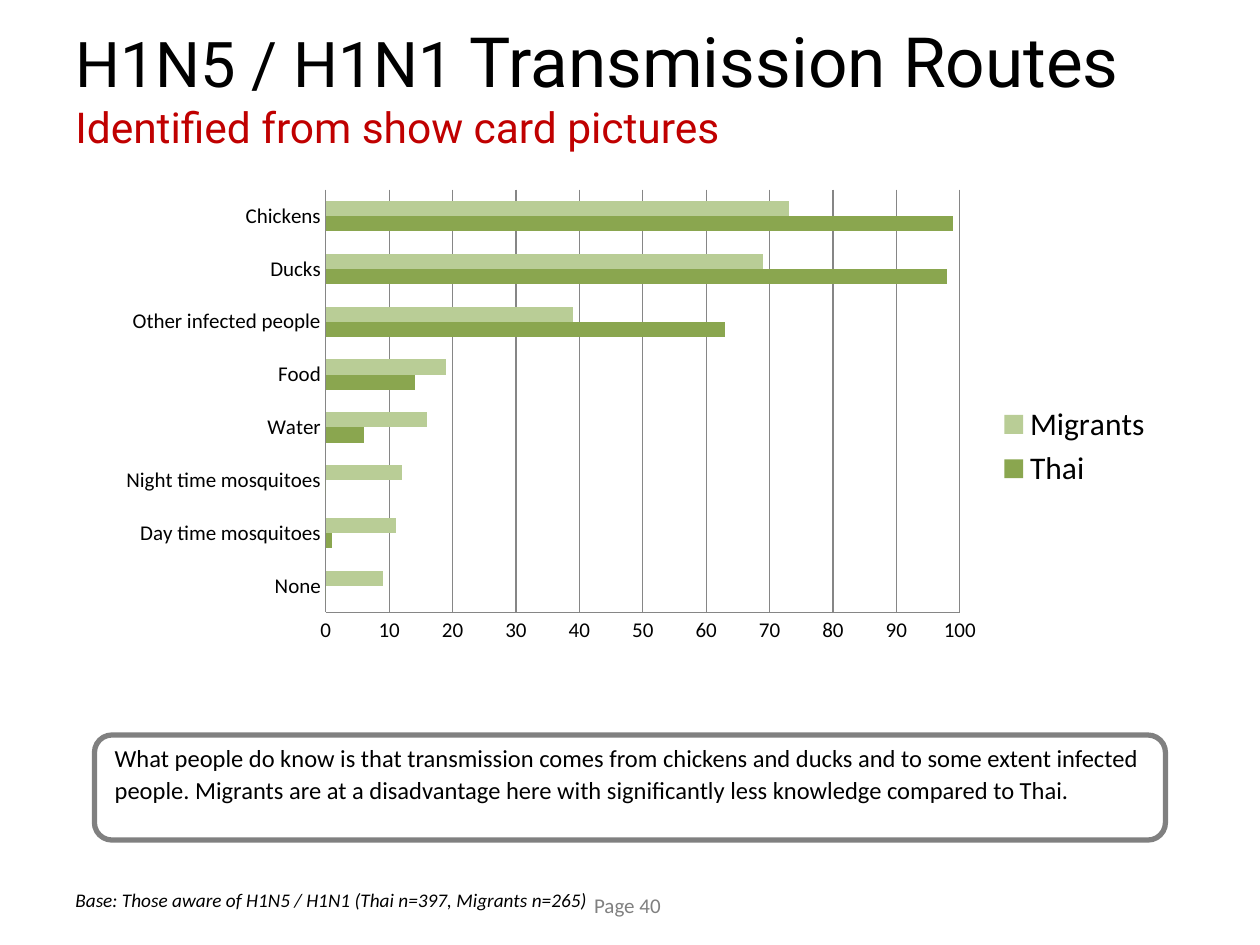
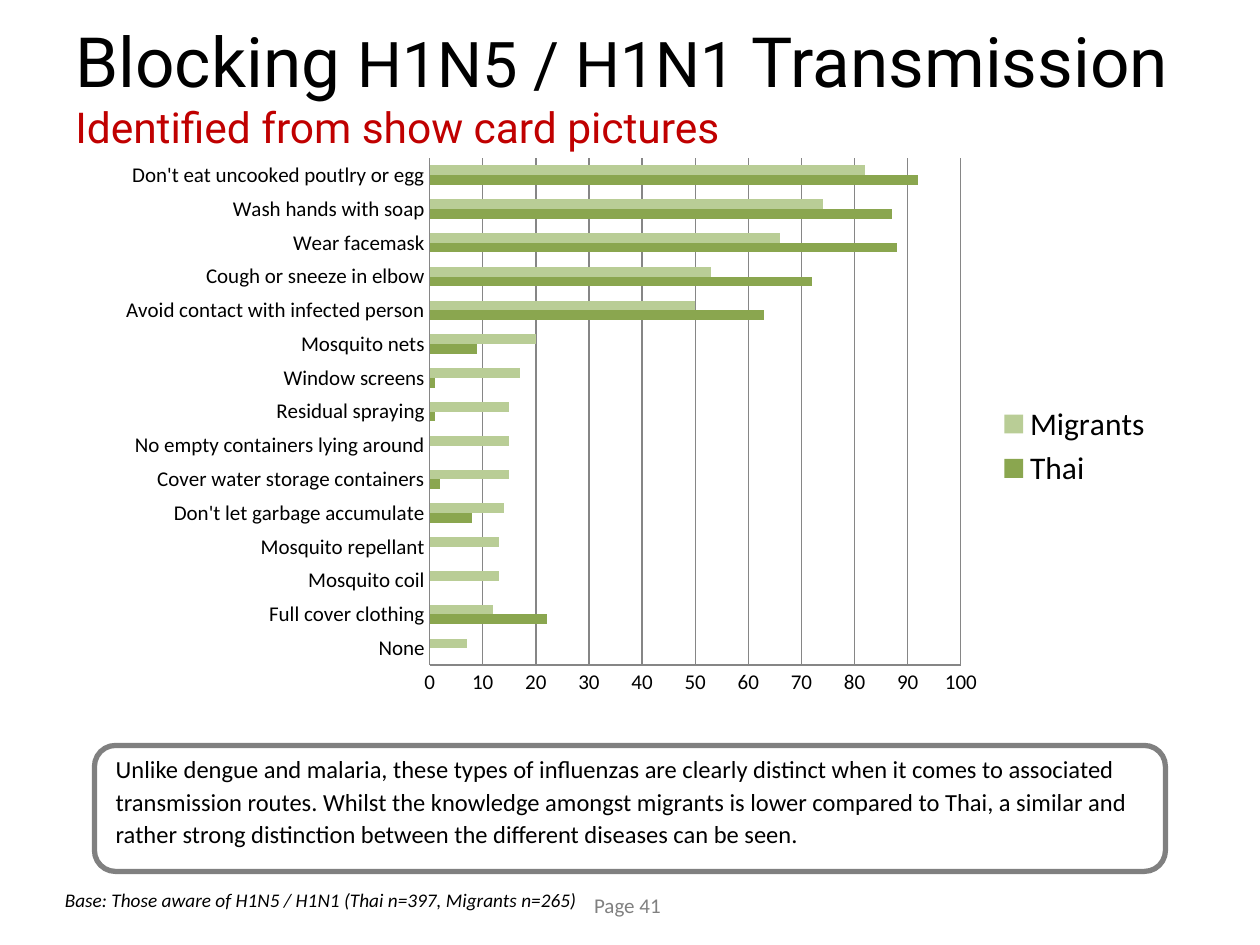
from dataclasses import dataclass

from lxml import etree
from pptx import Presentation
from pptx.chart.data import CategoryChartData
from pptx.dml.color import RGBColor
from pptx.enum.chart import XL_CHART_TYPE, XL_LEGEND_POSITION, XL_TICK_MARK
from pptx.enum.shapes import MSO_SHAPE
from pptx.enum.text import MSO_ANCHOR, PP_ALIGN
from pptx.oxml.ns import qn
from pptx.util import Inches, Pt

BAR_CLUSTERED = XL_CHART_TYPE.BAR_CLUSTERED
LEGEND_RIGHT = XL_LEGEND_POSITION.RIGHT
NO_TICK = XL_TICK_MARK.NONE
ROUNDED = MSO_SHAPE.ROUNDED_RECTANGLE
TOP, MIDDLE = MSO_ANCHOR.TOP, MSO_ANCHOR.MIDDLE
LEFT = PP_ALIGN.LEFT

# Shared style: the slide is a grid of 120 columns by 90 rows
SLIDE_WIDTH, SLIDE_HEIGHT = Inches(10), Inches(7.5)
COLUMN, ROW = SLIDE_WIDTH / 120, SLIDE_HEIGHT / 90
BODY_LEFT, BODY_WIDTH = 9, 102
HEADING_FONT, BODY_FONT = "Roboto", "Calibri"
BLACK, RED, GRAY, GRID_GRAY = "000000", "C00000", "808080", "868686"
THAI_GREEN, MIGRANT_GREEN = "8AA64F", "B9CD96"
VIRUS_SIZE, TITLE_SIZE, SUBTITLE_SIZE = 36, 39.6, 24.3
SUBTITLE = "Identified from show card pictures"
BASE_NOTE = "Base: Those aware of H1N5 / H1N1 (Thai n=397, Migrants n=265)"


@dataclass(frozen=True)
class Area:
    """A place on the grid, in columns and rows."""
    left: float
    top: float
    width: float
    height: float

    def lengths(self) -> tuple[int, int, int, int]:
        return (round(self.left * COLUMN), round(self.top * ROW),
                round(self.width * COLUMN), round(self.height * ROW))


@dataclass(frozen=True)
class Answer:
    """One bar pair, in percent."""
    label: str
    thai: int | None
    migrants: int


@dataclass(frozen=True)
class Survey:
    """The content of one slide."""
    page: int
    title: list[tuple[str, float]]
    chart_area: Area
    plot_shares: dict[str, float]
    answers: list[Answer]
    finding: str
    finding_area: Area
    base_left: float


SURVEYS = [
    Survey(
        page=40,
        title=[("H1N5 / H1N1 ", VIRUS_SIZE), ("Transmission Routes", TITLE_SIZE)],
        chart_area=Area(BODY_LEFT, 18, BODY_WIDTH, 49),
        plot_shares={"x": 0.216, "y": 0, "w": 0.592, "h": 0.823},
        answers=[
            Answer("None", 0, 9),
            Answer("Day time mosquitoes", 1, 11),
            Answer("Night time mosquitoes", 0, 12),
            Answer("Water", 6, 16),
            Answer("Food", 14, 19),
            Answer("Other infected people", 63, 39),
            Answer("Ducks", 98, 69),
            Answer("Chickens", 99, 73),
        ],
        finding="What people do know is that transmission comes from chickens and "
                "ducks and to some extent infected people. Migrants are at a "
                "disadvantage here with significantly less knowledge compared to Thai.",
        finding_area=Area(BODY_LEFT, 70, BODY_WIDTH, 10),
        base_left=6,
    ),
    Survey(
        page=41,
        title=[("Blocking ", TITLE_SIZE), ("H1N5 / H1N1 ", VIRUS_SIZE),
               ("Transmission", TITLE_SIZE)],
        chart_area=Area(BODY_LEFT, 14, BODY_WIDTH, 57),
        plot_shares={"x": 0.313, "y": 0.019, "w": 0.496, "h": 0.847},
        answers=[
            Answer("None", 0, 7),
            Answer("Full cover clothing", 22, 12),
            Answer("Mosquito coil", None, 13),
            Answer("Mosquito repellant", None, 13),
            Answer("Don't let garbage accumulate", 8, 14),
            Answer("Cover water storage containers", 2, 15),
            Answer("No empty containers lying around", None, 15),
            Answer("Residual spraying", 1, 15),
            Answer("Window screens", 1, 17),
            Answer("Mosquito nets", 9, 20),
            Answer("Avoid contact with infected person", 63, 50),
            Answer("Cough or sneeze in elbow", 72, 53),
            Answer("Wear facemask", 88, 66),
            Answer("Wash hands with soap", 87, 74),
            Answer("Don't eat uncooked poutlry or egg", 92, 82),
        ],
        finding="Unlike dengue and malaria, these types of influenzas are clearly "
                "distinct when it comes to associated transmission routes. Whilst the "
                "knowledge amongst migrants is lower compared to Thai, a similar and "
                "rather strong distinction between the different diseases can be seen.",
        finding_area=Area(BODY_LEFT, 71, BODY_WIDTH, 12),
        base_left=5,
    ),
]


def rgb(color: str) -> RGBColor:
    return RGBColor.from_string(color)


def add_text(paragraph, text: str, *, size: float, color: str = BLACK,
             font: str = BODY_FONT, italic: bool = False) -> None:
    run = paragraph.add_run()
    run.text = text
    run.font.name, run.font.size = font, Pt(size)
    run.font.color.rgb = rgb(color)
    run.font.italic = italic


def add_label(slide, area: Area, text: str, **text_format) -> None:
    frame = slide.shapes.add_textbox(*area.lengths()).text_frame
    frame.word_wrap = False
    add_text(frame.paragraphs[0], text, **text_format)


def add_title(slide, parts: list[tuple[str, float]]) -> None:
    frame = slide.shapes.add_textbox(*Area(6, 3, 108, 9.4).lengths()).text_frame
    frame.word_wrap = True
    frame.vertical_anchor = MIDDLE
    frame.margin_top = Inches(0.12)
    heading = frame.paragraphs[0]
    for text, size in parts:
        add_text(heading, text, size=size, font=HEADING_FONT)
    heading.add_line_break()
    add_text(heading, SUBTITLE, size=SUBTITLE_SIZE, color=RED, font=HEADING_FONT)


def add_finding(slide, area: Area, text: str) -> None:
    box = slide.shapes.add_shape(ROUNDED, *area.lengths())
    box.shadow.inherit = False
    box.fill.background()
    box.line.color.rgb, box.line.width = rgb(GRAY), Pt(3)
    frame = box.text_frame
    frame.word_wrap = True
    frame.vertical_anchor = TOP
    frame.margin_top = frame.margin_right = frame.margin_bottom = 0
    frame.margin_left = Inches(0.12)
    paragraph = frame.paragraphs[0]
    paragraph.alignment, paragraph.line_spacing = LEFT, 1.1
    add_text(paragraph, text, size=14)


def place_plot(chart, shares: dict[str, float]) -> None:
    """Fix the inner plot area as shares of the chart."""
    plot_area = chart.element.find(".//" + qn("c:plotArea"))
    for automatic in plot_area.findall(qn("c:layout")):
        plot_area.remove(automatic)
    layout = etree.Element(qn("c:layout"))
    manual = etree.SubElement(layout, qn("c:manualLayout"))
    settings = {"layoutTarget": "inner", "xMode": "edge", "yMode": "edge", **shares}
    for tag, value in settings.items():
        etree.SubElement(manual, qn(f"c:{tag}")).set("val", str(value))
    plot_area.insert(0, layout)


def style_line(line) -> None:
    line.color.rgb, line.width = rgb(GRID_GRAY), Pt(0.75)


def add_answer_chart(slide, survey: Survey) -> None:
    data = CategoryChartData()
    data.categories = [answer.label for answer in survey.answers]
    data.add_series("Thai", [answer.thai for answer in survey.answers])
    data.add_series("Migrants", [answer.migrants for answer in survey.answers])
    chart = slide.shapes.add_chart(
        BAR_CLUSTERED, *survey.chart_area.lengths(), data).chart
    chart.has_title = False
    chart.font.name, chart.font.size = BODY_FONT, Pt(18)
    chart.font.color.rgb = rgb(BLACK)
    chart.has_legend = True
    chart.legend.position = LEGEND_RIGHT
    chart.legend.include_in_layout = False

    # Bars
    bars = chart.plots[0]
    bars.gap_width, bars.overlap = 150, 0
    bars.vary_by_categories = False
    for series, color in zip(bars.series, (THAI_GREEN, MIGRANT_GREEN)):
        series.format.fill.solid()
        series.format.fill.fore_color.rgb = rgb(color)

    # Axes
    for axis in (chart.category_axis, chart.value_axis):
        axis.major_tick_mark = axis.minor_tick_mark = NO_TICK
        axis.tick_labels.font.size = Pt(12)
        style_line(axis.format.line)
    percent = chart.value_axis
    percent.minimum_scale, percent.maximum_scale, percent.major_unit = 0, 100, 10
    percent.has_major_gridlines = True
    style_line(percent.major_gridlines.format.line)
    place_plot(chart, survey.plot_shares)


def add_survey_slide(deck, survey: Survey) -> None:
    slide = deck.slides.add_slide(deck.slide_layouts[6])
    add_label(slide, Area(55.4, 84.4, 9.2, 3.6), f"Page {survey.page}",
              size=12, color=GRAY)
    add_title(slide, survey.title)
    add_finding(slide, survey.finding_area, survey.finding)
    add_answer_chart(slide, survey)
    add_label(slide, Area(survey.base_left, 84, 51.6, 3.5), BASE_NOTE,
              size=11, italic=True)


def main() -> None:
    deck = Presentation()
    deck.slide_width, deck.slide_height = SLIDE_WIDTH, SLIDE_HEIGHT
    for survey in SURVEYS:
        add_survey_slide(deck, survey)
    deck.save("out.pptx")


if __name__ == "__main__":
    main()
